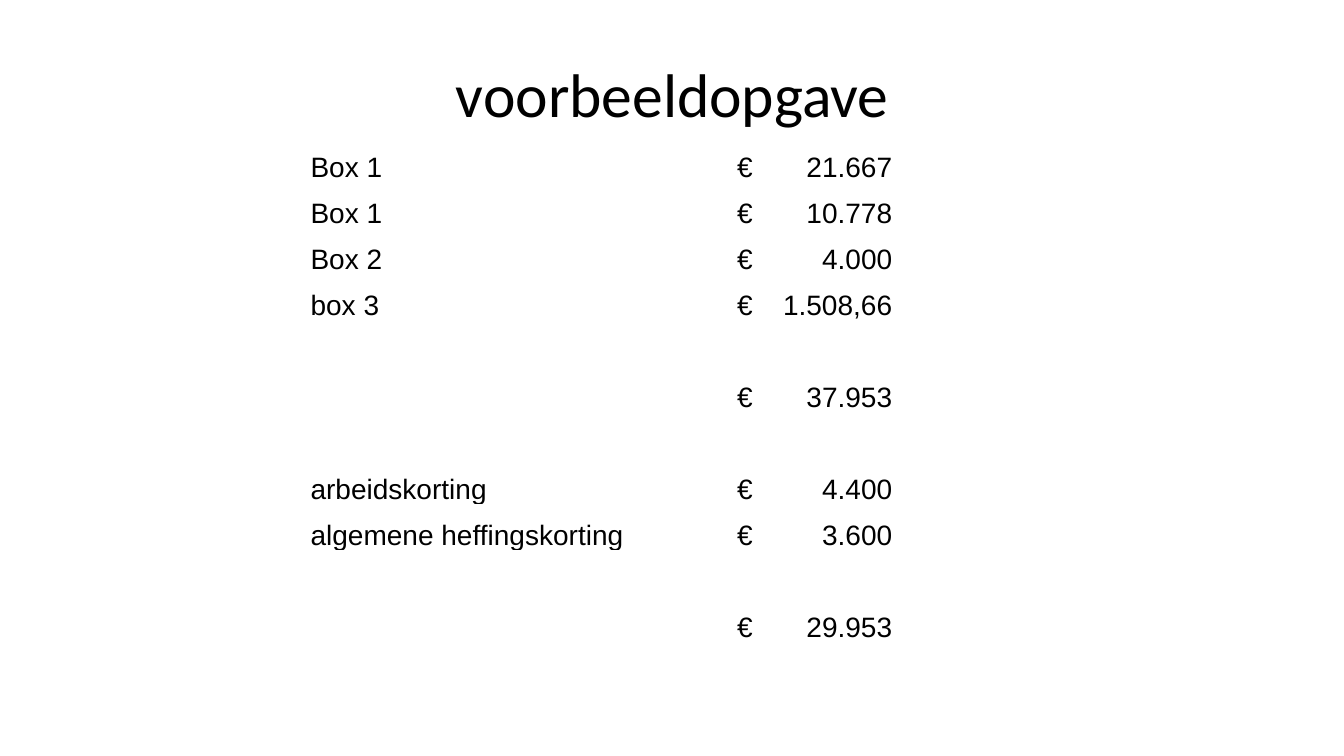
from lxml.etree import SubElement
from pptx import Presentation
from pptx.dml.color import RGBColor as RGB
from pptx.enum.text import MSO_ANCHOR as Anchor, PP_ALIGN as Align
from pptx.oxml.ns import qn
from pptx.util import Inches, Pt

COLORS = {"text": "000000"}
ROWS = [
    ("Box 1", "21.667"),
    ("Box 1", "10.778"),
    ("Box 2", "4.000"),
    ("box 3", "1.508,66"),
    ("", ""),
    ("", "37.953"),
    ("", ""),
    ("arbeidskorting", "4.400"),
    ("algemene heffingskorting", "3.600"),
    ("", ""),
    ("", "29.953"),
]


def style(para, name, size):
    """Set the font of a paragraph."""
    font = para.font
    font.name, font.size = name, Pt(size)
    font.color.rgb = RGB.from_string(COLORS["text"])


def add_title(slide, text, left, top, width, height):
    """Place the centred title in its box."""
    box = slide.shapes.add_textbox(*map(Inches, (left, top, width, height)))
    frame = box.text_frame
    frame.word_wrap = True
    frame.vertical_anchor = Anchor.MIDDLE
    para = frame.paragraphs[0]
    para.text = text
    para.alignment = Align.CENTER
    style(para, "Calibri", 44)


def add_stop(para, pos):
    """Give a paragraph one right-aligned tab stop."""
    tabs = SubElement(para._p.get_or_add_pPr(), qn("a:tabLst"))
    SubElement(tabs, qn("a:tab"), pos=str(Inches(pos)), algn="r")


def fill_cell(cell, text, inset, stop=None):
    """Write one table cell on the bottom line, without fill."""
    cell.fill.background()
    cell.vertical_anchor = Anchor.BOTTOM
    cell.margin_left = Inches(inset)
    cell.margin_right = cell.margin_top = Inches(0.01)
    cell.margin_bottom = 0
    para = cell.text_frame.paragraphs[0]
    para.text = text
    if stop:
        add_stop(para, stop)
    style(para, "Arial", 20)


def add_sums(slide, left, top, width, height):
    """Place the table of labels and euro amounts in its box."""
    frame = slide.shapes.add_table(
        len(ROWS), 2, *map(Inches, (left, top, width, height)))
    table = frame.table
    table.first_row = table.horz_banding = False
    first = 4.15
    table.columns[0].width = Inches(first)
    table.columns[1].width = Inches(width - first)
    for row, (label, sum_) in zip(table.rows, ROWS):
        row.height = Inches(height / len(ROWS))
        fill_cell(row.cells[0], label, 0.01)
        fill_cell(row.cells[1], f"€\t{sum_}" if sum_ else "", 0.09, 1.54)


def main():
    """Build and save the slide."""
    deck = Presentation()
    deck.slide_width, deck.slide_height = Inches(13.33), Inches(7.5)
    slide = deck.slides.add_slide(deck.slide_layouts[6])
    add_title(slide, "voorbeeldopgave", 0.67, 0.3, 12, 1.25)
    add_sums(slide, 3.07, 1.36, 6.75, 5.02)
    deck.save("out.pptx")


if __name__ == "__main__":
    main()
